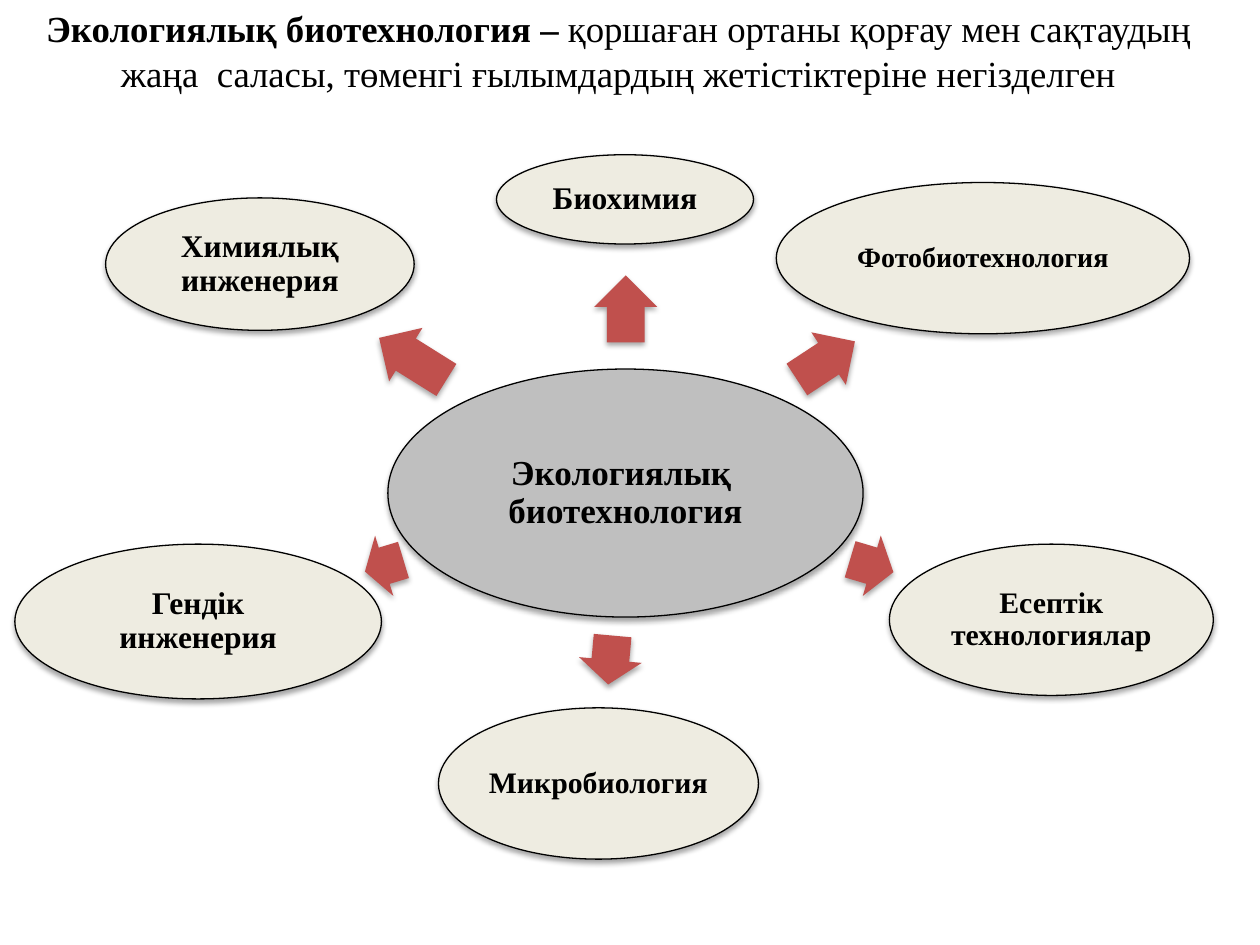
from dataclasses import dataclass

import pptx
import pptx.dml.color
import pptx.enum.shapes
import pptx.enum.text
import pptx.oxml
import pptx.oxml.ns
import pptx.util
from pptx.util import Cm, Pt


@dataclass(frozen=True)
class Theme:
    font: str = "Times New Roman"
    ink: str = "000000"
    hub: str = "BFBFBF"
    field: str = "EEECE1"
    arrow: str = "C0504D"
    title_size: int = 21
    hub_size: int = 20
    large: int = 18
    medium: int = 17
    small: int = 16


THEME = Theme()
ARROW_WIDTH = 1.27

TITLE = (
    ("Экологиялық биотехнология – ", True),
    ("қоршаған ортаны қорғау мен сақтаудың жаңа  саласы, "
     "төменгі ғылымдардың жетістіктеріне негізделген", False),
)
HUB = ("Экологиялық  биотехнология", (7.82, 7.44, 9.58, 5.0))

# label, type size, ellipse box, arrow (left, top, length, rotation)
FIELDS = (
    ("Биохимия", THEME.large, (10.01, 3.12, 5.18, 1.8), (11.94, 5.59, 1.35, 270)),
    ("Фотобиотехнология", THEME.small, (15.65, 3.68, 8.33, 3.05), (15.95, 6.63, 1.4, 326.7)),
    ("Есептік технологиялар", THEME.medium, (17.93, 10.97, 6.53, 3.05), (17.12, 10.77, 0.91, 16.6)),
    ("Микробиология", THEME.medium, (8.84, 14.27, 6.45, 3.05), (11.81, 12.67, 0.99, 95.2)),
    ("Гендік инженерия", THEME.large, (0.3, 10.97, 7.39, 3.12), (7.34, 10.77, 0.81, 163.2)),
    ("Химиялық инженерия", THEME.large, (2.13, 3.99, 6.22, 2.67), (7.52, 6.6, 1.6, 212)),
)


def rgb(value):
    return pptx.dml.color.RGBColor.from_string(value)


def style_run(r, size, bold):
    r.font.name = THEME.font
    r.font.size = Pt(size)
    r.font.bold = bold
    r.font.color.rgb = rgb(THEME.ink)


def add_soft_shadow(sp):
    """Put a faint shadow straight below the shape; call after setting its line."""
    sp.shadow.inherit = False
    effects = sp._element.spPr.find(pptx.oxml.ns.qn("a:effectLst"))
    effects.append(pptx.oxml.parse_xml(
        f'<a:outerShdw {pptx.oxml.ns.nsdecls("a")} blurRad="{Pt(3.1)}" '
        f'dist="{Pt(1.8)}" dir="5400000" rotWithShape="0">'
        f'<a:srgbClr val="{THEME.ink}"><a:alpha val="35000"/></a:srgbClr>'
        '</a:outerShdw>'))


def add_filled_shape(s, kind, box, fill):
    sp = s.shapes.add_shape(kind, *map(Cm, box))
    sp.fill.solid()
    sp.fill.fore_color.rgb = rgb(fill)
    return sp


def add_ellipse(s, text, size, box, fill):
    sp = add_filled_shape(s, pptx.enum.shapes.MSO_SHAPE.OVAL, box, fill)
    sp.line.color.rgb = rgb(THEME.ink)
    sp.line.width = Pt(0.75)
    add_soft_shadow(sp)
    tf = sp.text_frame
    tf.word_wrap = True
    tf.vertical_anchor = pptx.enum.text.MSO_ANCHOR.MIDDLE
    tf.margin_left = tf.margin_right = tf.margin_top = tf.margin_bottom = Cm(0.05)
    tf.text = text
    p = tf.paragraphs[0]
    p.alignment = pptx.enum.text.PP_ALIGN.CENTER
    p.line_spacing = 0.9
    style_run(p.runs[0], size, True)


def add_arrow(s, left, top, length, rotation):
    sp = add_filled_shape(s, pptx.enum.shapes.MSO_SHAPE.RIGHT_ARROW,
                          (left, top, length, ARROW_WIDTH), THEME.arrow)
    sp.adjustments[0] = 0.6
    sp.adjustments[1] = 0.5
    sp.rotation = rotation
    sp.line.fill.background()
    add_soft_shadow(sp)


def add_title(s):
    tf = s.shapes.add_textbox(Cm(-0.08), Cm(0), Cm(25.1), Cm(2.06)).text_frame
    tf.word_wrap = True
    tf.auto_size = pptx.enum.text.MSO_AUTO_SIZE.SHAPE_TO_FIT_TEXT
    p = tf.paragraphs[0]
    p.alignment = pptx.enum.text.PP_ALIGN.CENTER
    for text, bold in TITLE:
        r = p.add_run()
        r.text = text
        style_run(r, THEME.title_size, bold)


def main():
    prs = pptx.Presentation()
    prs.slide_width, prs.slide_height = Cm(25.4), Cm(19.05)
    s = prs.slides.add_slide(prs.slide_layouts[6])
    add_title(s)
    hub_text, hub_box = HUB
    add_ellipse(s, hub_text, THEME.hub_size, hub_box, THEME.hub)
    for text, size, box, arrow in FIELDS:
        add_arrow(s, *arrow)
        add_ellipse(s, text, size, box, THEME.field)
    prs.save("out.pptx")


if __name__ == "__main__":
    main()
